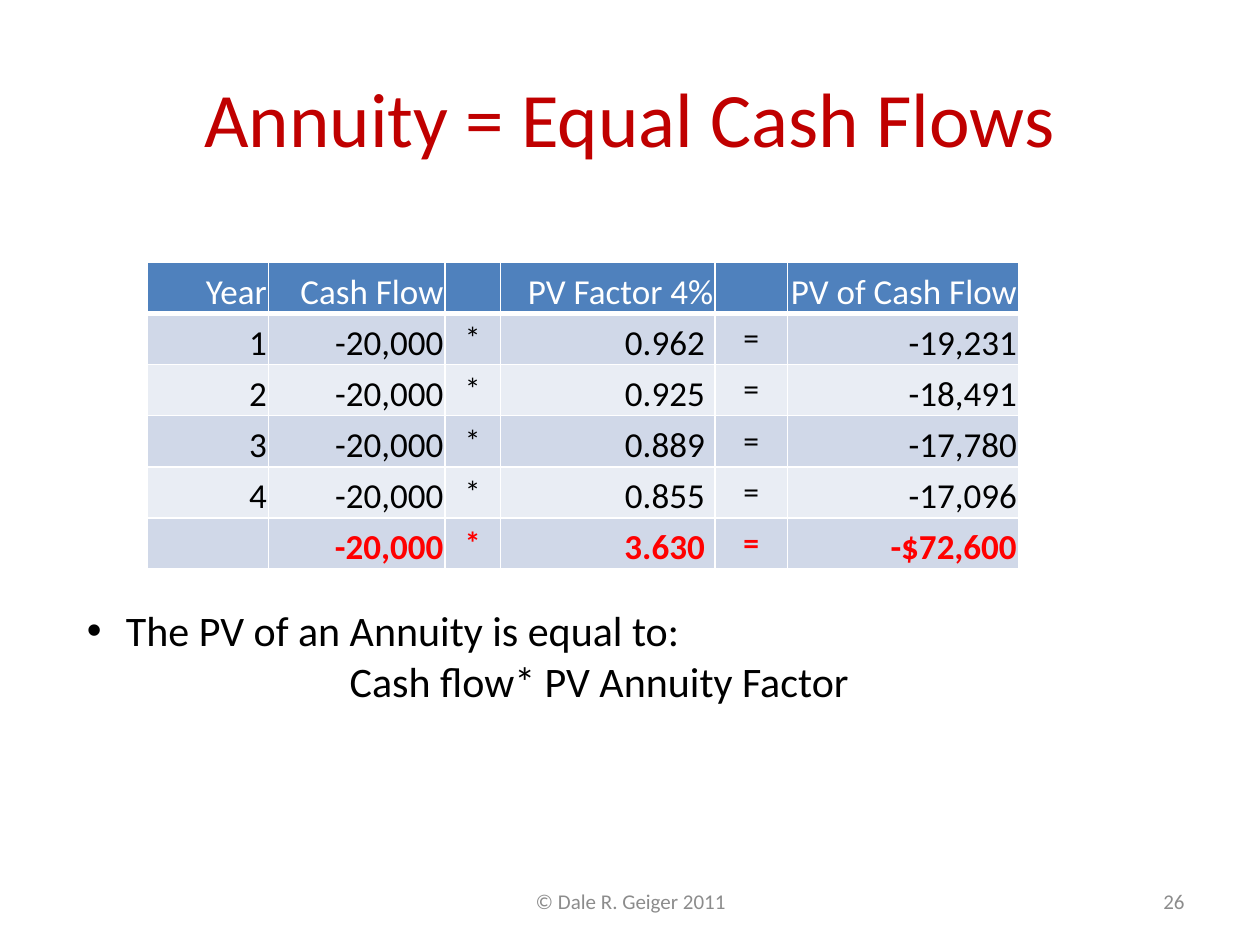
from lxml import etree
from pptx import Presentation
from pptx import util as u
from pptx.dml.color import RGBColor
from pptx.enum import text as t
from pptx.oxml import ns

hues = {"title": "C00000", "head": "4F81BD", "odd": "D0D8E8", "even": "E9EDF4",
        "white": "FFFFFF", "black": "000000", "total": "FF0000", "foot": "8C8C8C"}
LEFT, MID, RIGHT = t.PP_ALIGN.LEFT, t.PP_ALIGN.CENTER, t.PP_ALIGN.RIGHT


def write(par, words, size=20, hue="black", align=LEFT, bold=False):
    par.alignment = align
    run = par.add_run()
    run.text = words
    font = run.font
    font.name, font.size, font.bold = "Calibri", u.Pt(size), bold
    font.color.rgb = RGBColor.from_string(hues[hue])


def edge(cell, side, width):
    line = etree.SubElement(cell._tc.get_or_add_tcPr(), ns.qn("a:" + side), w=str(u.Pt(width)))
    fill = etree.SubElement(line, ns.qn("a:solidFill"))
    etree.SubElement(fill, ns.qn("a:srgbClr"), val=hues["white"])


deck = Presentation()
deck.slide_width, deck.slide_height = u.Cm(25.4), u.Cm(19.05)
slide = deck.slides.add_slide(deck.slide_layouts[5])

title = slide.shapes.title
title.left, title.top, title.width, title.height = u.Cm(1.27), u.Cm(0.76), u.Cm(22.86), u.Cm(3.18)
title.text_frame.vertical_anchor = t.MSO_ANCHOR.MIDDLE
write(title.text_frame.paragraphs[0], "Annuity = Equal Cash Flows", size=44, hue="title", align=MID)

rows = [["Year", "Cash Flow", "", "PV Factor 4%", "", "PV of Cash Flow"]]
flows = [("0.962", "-19,231"), ("0.925", "-18,491"), ("0.889", "-17,780"), ("0.855", "-17,096")]
for year, (factor, value) in enumerate(flows, 1):
    rows.append([str(year), "-20,000", "*", factor, "=", value])
rows.append(["", "-20,000", "*", "3.630", "=", "-$72,600"])
last = len(rows) - 1

wides = [2.44, 3.56, 1.12, 4.32, 1.47, 4.65]
tall = 1.03
table = slide.shapes.add_table(len(rows), len(wides), u.Cm(2.97), u.Cm(5.29),
                               u.Cm(sum(wides)), u.Cm(tall * len(rows))).table
for col, wide in zip(table.columns, wides):
    col.width = u.Cm(wide)
for r, row in enumerate(rows):
    table.rows[r].height = u.Cm(tall)
    for c, words in enumerate(row):
        cell = table.cell(r, c)
        for side in ("lnL", "lnR", "lnT", "lnB"):
            edge(cell, side, 3 if r == 0 and side == "lnB" else 1)
        cell.fill.solid()
        shade = "head" if r == 0 else "odd" if r % 2 else "even"
        cell.fill.fore_color.rgb = RGBColor.from_string(hues[shade])
        if not words:
            continue
        sign = words in "*="
        if not sign:
            cell.vertical_anchor = t.MSO_ANCHOR.BOTTOM
            cell.margin_left = cell.margin_top = u.Cm(0.03)
            cell.margin_right = u.Cm(0.2 if c == 3 and r else 0.03)
            cell.margin_bottom = 0
        write(cell.text_frame.paragraphs[0], words, size=18 if sign else 20,
              hue="white" if r == 0 else "total" if r == last else "black",
              align=MID if sign else RIGHT, bold=r == last)

note = slide.shapes.add_textbox(u.Cm(1.5), u.Cm(12.07), u.Cm(21.16), u.Cm(2.31)).text_frame
note.word_wrap = True
point = note.paragraphs[0]
props = point._p.get_or_add_pPr()
props.set("marL", str(u.Cm(0.79)))
props.set("indent", str(u.Cm(-0.79)))
etree.SubElement(props, ns.qn("a:buFont"), typeface="Arial")
etree.SubElement(props, ns.qn("a:buChar"), char="•")
write(point, "The PV of an Annuity is equal to:", size=24)
write(note.add_paragraph(), "Cash flow* PV Annuity Factor", size=24, align=MID)

feet = [("© Dale R. Geiger 2011", 8.69, 8.05, MID), ("26", 18.21, 5.92, RIGHT)]
for words, left, wide, align in feet:
    foot = slide.shapes.add_textbox(u.Cm(left), u.Cm(17.65), u.Cm(wide), u.Cm(1.02)).text_frame
    foot.word_wrap = True
    foot.vertical_anchor = t.MSO_ANCHOR.MIDDLE
    write(foot.paragraphs[0], words, size=12, hue="foot", align=align)

deck.save("out.pptx")
